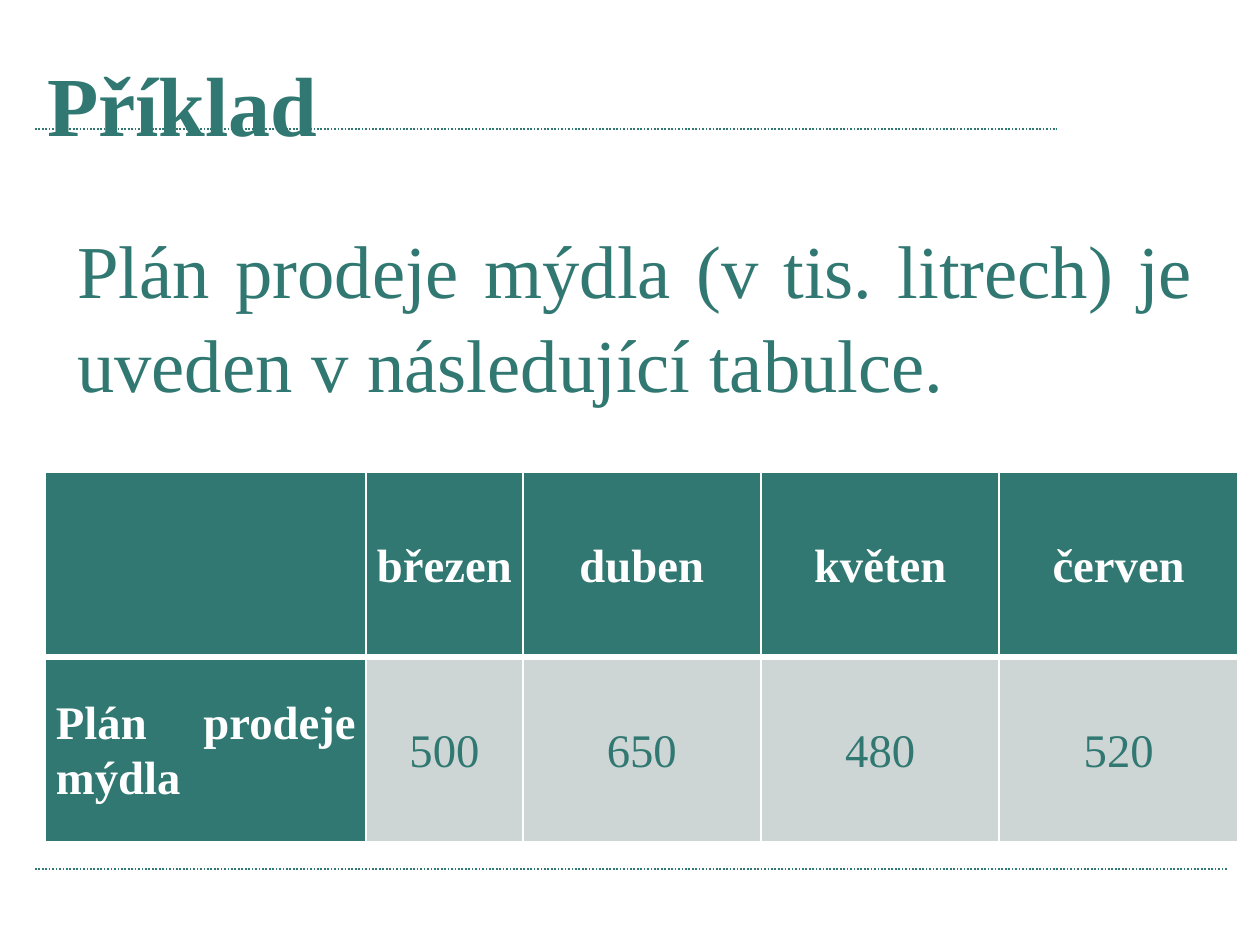
from dataclasses import dataclass

from lxml.etree import SubElement
from pptx import Presentation
from pptx.dml.color import RGBColor
from pptx.enum.dml import MSO_LINE
from pptx.enum.shapes import MSO_CONNECTOR
from pptx.enum.text import MSO_ANCHOR, PP_ALIGN
from pptx.oxml.ns import qn
from pptx.util import Pt


@dataclass(frozen=True)
class Theme:
    font: str = "Times New Roman"
    teal: RGBColor = RGBColor(0x30, 0x78, 0x71)
    pale: RGBColor = RGBColor(0xCD, 0xD6, 0xD5)
    white: RGBColor = RGBColor(0xFF, 0xFF, 0xFF)
    title_size: int = 36
    body_size: int = 32
    table_size: int = 20


THEME = Theme()
PLAN_ROWS = [
    ["", "březen", "duben", "květen", "červen"],
    ["Plán prodeje mýdla", "500", "650", "480", "520"],
]
COLUMN_WIDTHS = [137.5, 67, 102.2, 102.2, 102.2]


def write(paragraph, text, size, color, bold=False):
    run = paragraph.add_run()
    run.text = text
    run.font.name = THEME.font
    run.font.size = Pt(size)
    run.font.bold = bold
    run.font.color.rgb = color


def add_rule(slide, left, top, width):
    rule = slide.shapes.add_connector(
        MSO_CONNECTOR.STRAIGHT, Pt(left), Pt(top), Pt(left + width), Pt(top))
    rule.line.color.rgb = THEME.teal
    rule.line.width = Pt(0.75)
    rule.line.dash_style = MSO_LINE.ROUND_DOT
    SubElement(rule._element.spPr, qn("a:effectLst"))


def place_title(slide, text, left, top, width, height):
    title = slide.shapes.title
    title.left, title.top = Pt(left), Pt(top)
    title.width, title.height = Pt(width), Pt(height)
    frame = title.text_frame
    frame.vertical_anchor = MSO_ANCHOR.TOP
    frame.margin_top, frame.margin_bottom = Pt(7.5), Pt(0)
    paragraph = frame.paragraphs[0]
    paragraph.alignment = PP_ALIGN.LEFT
    paragraph.line_spacing = 1.0
    write(paragraph, text, THEME.title_size, THEME.teal, bold=True)


def add_body(slide, text, left, top, width, height):
    box = slide.shapes.add_textbox(Pt(left), Pt(top), Pt(width), Pt(height))
    box.text_frame.word_wrap = True
    paragraph = box.text_frame.paragraphs[0]
    paragraph.alignment = PP_ALIGN.JUSTIFY
    paragraph.line_spacing = 1.05
    write(paragraph, text, THEME.body_size, THEME.teal)


def set_borders(cell, widths):
    """Draw white cell borders; widths maps a side tag to its points."""
    properties = cell._tc.get_or_add_tcPr()
    for position, (side, width) in enumerate(widths.items()):
        line = properties.makeelement(qn(f"a:{side}"), {"w": str(Pt(width))})
        fill = SubElement(line, qn("a:solidFill"))
        SubElement(fill, qn("a:srgbClr"), val=str(THEME.white))
        properties.insert(position, line)


def fill_cell(cell, text, is_header_row, is_first_column):
    is_heading = is_header_row or is_first_column
    cell.fill.solid()
    cell.fill.fore_color.rgb = THEME.teal if is_heading else THEME.pale
    cell.vertical_anchor = MSO_ANCHOR.MIDDLE
    cell.margin_left = cell.margin_right = Pt(4.5)
    cell.margin_top = cell.margin_bottom = Pt(0)
    set_borders(cell, {"lnL": 1, "lnR": 1,
                       "lnT": 1 if is_header_row else 3,
                       "lnB": 3 if is_header_row else 1})
    if text:
        paragraph = cell.text_frame.paragraphs[0]
        paragraph.alignment = PP_ALIGN.JUSTIFY if is_first_column else PP_ALIGN.CENTER
        paragraph.line_spacing = 1.07
        write(paragraph, text, THEME.table_size,
              THEME.white if is_heading else THEME.teal, bold=is_heading)


def add_plan_table(slide, left, top, height):
    table = slide.shapes.add_table(
        len(PLAN_ROWS), len(COLUMN_WIDTHS), Pt(left), Pt(top),
        Pt(sum(COLUMN_WIDTHS)), Pt(height)).table
    for column, width in zip(table.columns, COLUMN_WIDTHS):
        column.width = Pt(width)
    for row_index, row in enumerate(PLAN_ROWS):
        table.rows[row_index].height = Pt(height / len(PLAN_ROWS))
        for column_index, text in enumerate(row):
            fill_cell(table.cell(row_index, column_index), text,
                      row_index == 0, column_index == 0)


def build_example_slide(presentation):
    slide = presentation.slides.add_slide(presentation.slide_layouts[5])
    add_rule(slide, 15, 55.2, 438)
    add_rule(slide, 15, 372.4, 511)
    place_title(slide, "Příklad", 13, 15, 476, 42.5)
    add_body(slide, "Plán prodeje mýdla (v tis. litrech) je uveden v následující tabulce.",
             26, 90.5, 493, 88)
    add_plan_table(slide, 19.5, 202.5, 158.4)


def main():
    presentation = Presentation()
    presentation.slide_width, presentation.slide_height = Pt(540), Pt(405)
    build_example_slide(presentation)
    presentation.save("out.pptx")


if __name__ == "__main__":
    main()
